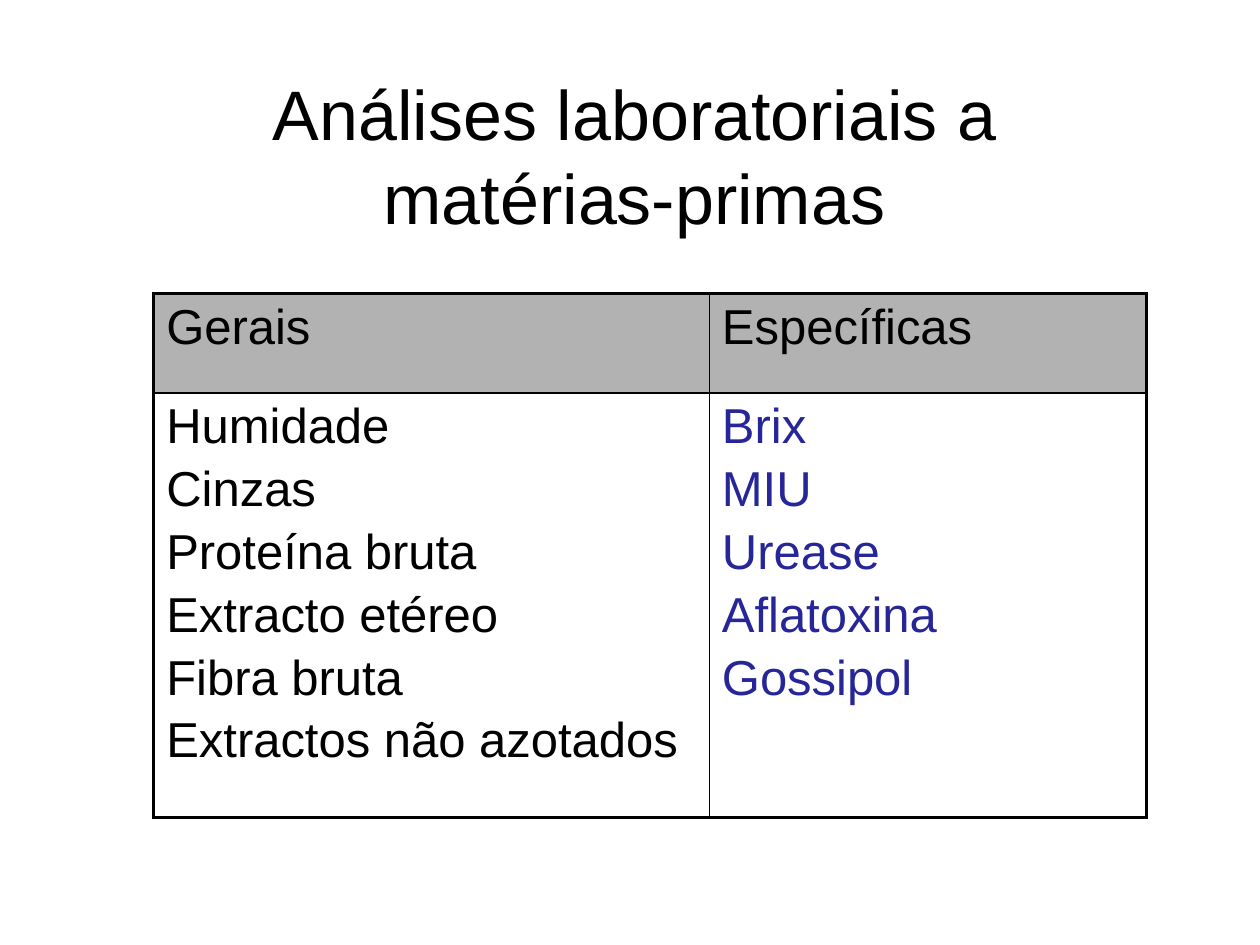
import dataclasses

import lxml.etree
import pptx
import pptx.dml.color
import pptx.enum.text
import pptx.oxml.ns
import pptx.util

Inches = pptx.util.Inches
Pt = pptx.util.Pt

BLACK = "000000"
OUTER_WIDTH = Pt(2.25)
INNER_WIDTH = Pt(1)
COLUMN_WIDTHS = (4.41, 3.47)
ROW_HEIGHTS = (0.79, 3.37)


@dataclasses.dataclass(frozen=True)
class CellContent:
    lines: tuple[str, ...]
    color: str = BLACK
    fill: str | None = None


ANALYSES = (
    (
        CellContent(("Gerais",), fill="B2B2B2"),
        CellContent(("Específicas",), fill="B2B2B2"),
    ),
    (
        CellContent((
            "Humidade", "Cinzas", "Proteína bruta",
            "Extracto etéreo", "Fibra bruta", "Extractos não azotados",
        )),
        CellContent(
            ("Brix", "MIU", "Urease", "Aflatoxina", "Gossipol"), color="262699"
        ),
    ),
)


def rgb(value: str) -> pptx.dml.color.RGBColor:
    return pptx.dml.color.RGBColor.from_string(value)


def set_attributes(target, values: dict) -> None:
    for name, value in values.items():
        setattr(target, name, value)


def write_lines(text_frame, lines: tuple[str, ...], size: float, color: str,
                paragraph_format: dict) -> None:
    for index, line in enumerate(lines):
        paragraph = text_frame.paragraphs[0] if index == 0 else text_frame.add_paragraph()
        set_attributes(paragraph, paragraph_format)
        run = paragraph.add_run()
        run.text = line
        set_attributes(run.font, {"name": "Arial", "size": Pt(size), "bold": False})
        run.font.color.rgb = rgb(color)


def set_borders(cell, widths: dict[str, int]) -> None:
    properties = cell._tc.get_or_add_tcPr()
    for position, (side, width) in enumerate(widths.items()):
        line = lxml.etree.Element(pptx.oxml.ns.qn(f"a:{side}"), w=str(int(width)))
        fill = lxml.etree.SubElement(line, pptx.oxml.ns.qn("a:solidFill"))
        lxml.etree.SubElement(fill, pptx.oxml.ns.qn("a:srgbClr"), val=BLACK)
        properties.insert(position, line)


def add_title(slide, text: str) -> None:
    shape = slide.shapes.add_textbox(
        Inches(0.98), Inches(0.6), Inches(8.11), Inches(1.25)
    )
    set_attributes(shape.text_frame, {
        "word_wrap": True,
        "vertical_anchor": pptx.enum.text.MSO_ANCHOR.MIDDLE,
    })
    write_lines(shape.text_frame, (text,), 40, BLACK,
                {"alignment": pptx.enum.text.PP_ALIGN.CENTER})


def fill_cell(cell, content: CellContent) -> None:
    if content.fill:
        cell.fill.solid()
        cell.fill.fore_color.rgb = rgb(content.fill)
    else:
        cell.fill.background()
    write_lines(cell.text_frame, content.lines, 28, content.color,
                {"space_before": Pt(4.7)})


def add_analysis_table(slide) -> None:
    row_count, column_count = len(ROW_HEIGHTS), len(COLUMN_WIDTHS)
    table = slide.shapes.add_table(
        row_count, column_count, Inches(1.22), Inches(2.33),
        Inches(sum(COLUMN_WIDTHS)), Inches(sum(ROW_HEIGHTS)),
    ).table
    set_attributes(table, {"first_row": False, "horz_banding": False})
    for column, width in zip(table.columns, COLUMN_WIDTHS):
        column.width = Inches(width)
    for row, height in zip(table.rows, ROW_HEIGHTS):
        row.height = Inches(height)
    for row_index, contents in enumerate(ANALYSES):
        for column_index, content in enumerate(contents):
            cell = table.cell(row_index, column_index)
            fill_cell(cell, content)
            outer_sides = {
                "lnL": column_index == 0,
                "lnR": column_index == column_count - 1,
                "lnT": row_index == 0,
                "lnB": row_index == row_count - 1,
            }
            set_borders(cell, {
                side: OUTER_WIDTH if outer else INNER_WIDTH
                for side, outer in outer_sides.items()
            })


def main() -> None:
    presentation = pptx.Presentation()
    set_attributes(presentation, {"slide_width": Inches(10), "slide_height": Inches(7.5)})
    slide = presentation.slides.add_slide(presentation.slide_layouts[6])
    add_title(slide, "Análises laboratoriais a matérias-primas")
    add_analysis_table(slide)
    presentation.save("out.pptx")


if __name__ == "__main__":
    main()
